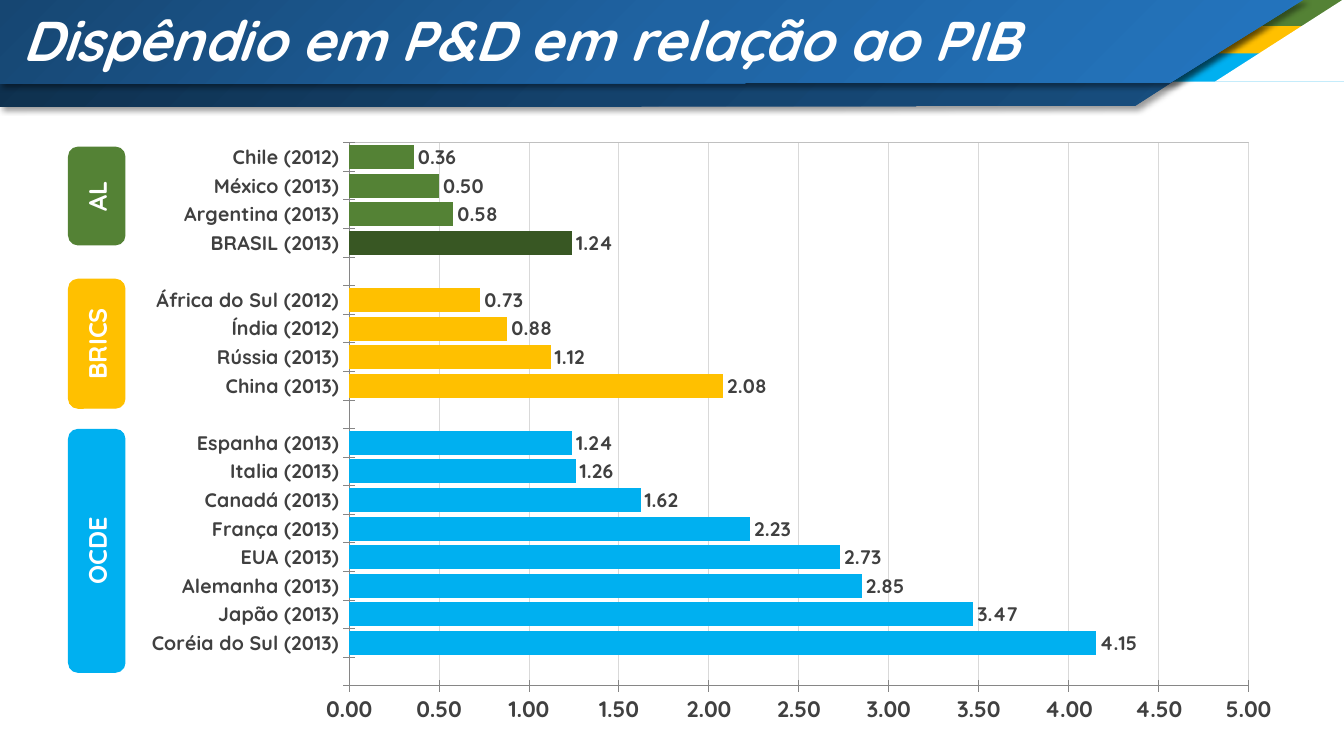
"""Build a slide comparing research spending as a share of GDP."""
import pptx
import pptx.chart.data
import pptx.dml.color
import pptx.enum.chart
import pptx.enum.shapes
import pptx.enum.text
import pptx.oxml
import pptx.oxml.ns
import pptx.util

Inches = pptx.util.Inches
GREEN, YELLOW, BLUE = "548235", "FFC000", "00B0F0"
WHITE, DARK_TEXT = "FFFFFF", "404040"
GROUPS = [
    ("OCDE", BLUE, 4.26, 2.41, [
        ("Coréia do Sul (2013)", 4.15), ("Japão (2013)", 3.47),
        ("Alemanha (2013)", 2.85), ("EUA (2013)", 2.73),
        ("França (2013)", 2.23), ("Canadá (2013)", 1.62),
        ("Italia (2013)", 1.26), ("Espanha (2013)", 1.24)]),
    ("BRICS", YELLOW, 2.77, 1.28, [
        ("China (2013)", 2.08), ("Rússia (2013)", 1.12),
        ("Índia (2012)", 0.88), ("África do Sul (2012)", 0.73)]),
    ("AL", GREEN, 1.46, 0.97, [
        ("BRASIL (2013)", 1.24), ("Argentina (2013)", 0.58),
        ("México (2013)", 0.5), ("Chile (2012)", 0.36)]),
]
HIGHLIGHTS = {"BRASIL (2013)": "385723"}


def colour(value):
    return pptx.dml.color.RGBColor.from_string(value)


def xml(tag, content, attributes=""):
    namespaces = pptx.oxml.ns.nsdecls("a", "c")
    return pptx.oxml.parse_xml(f"<{tag} {namespaces} {attributes}>{content}</{tag}>")


class SlideBuilder:
    """Hold the style and current slide."""

    def __init__(self, deck, font_name):
        self.page = deck.slides.add_slide(deck.slide_layouts[5])
        self.font_name = font_name

    def style(self, font, size, value, bold=True, italic=False):
        font.name = self.font_name
        font.size = pptx.util.Pt(size)
        font.bold = bold
        font.italic = italic
        font.color.rgb = colour(value)

    def title(self, text, left, top, width, height):
        box = self.page.shapes.title
        box.left, box.top = Inches(left), Inches(top)
        box.width, box.height = Inches(width), Inches(height)
        frame = box.text_frame
        frame.text = text
        frame.word_wrap = True
        frame.auto_size = pptx.enum.text.MSO_AUTO_SIZE.NONE
        frame.vertical_anchor = pptx.enum.text.MSO_ANCHOR.TOP
        paragraph = frame.paragraphs[0]
        paragraph.alignment = pptx.enum.text.PP_ALIGN.LEFT
        self.style(paragraph.font, 40, WHITE, italic=True)
        self.page.shapes.element.append(box.element)

    def shape(self, kind, left, top, width, height, fill):
        shape = self.page.shapes.add_shape(
            kind, Inches(left), Inches(top), Inches(width), Inches(height))
        shape.shadow.inherit = False
        shape.fill.solid()
        shape.fill.fore_color.rgb = colour(fill)
        shape.line.fill.background()
        return shape

    def band(self, points, stops):
        corners = [(Inches(x), Inches(y)) for x, y in points]
        builder = self.page.shapes.build_freeform(*corners[0])
        builder.add_line_segments(corners[1:], close=True)
        shape = builder.convert_to_shape()
        shape.line.fill.background()
        shape.fill.background()
        shape.shadow.inherit = False
        properties = shape.element.spPr
        stop_list = "".join(
            f'<a:gs pos="{position * 1000}"><a:srgbClr val="{value}"/></a:gs>'
            for position, value in zip((0, 50, 100), stops))
        gradient = xml("a:gradFill", f'<a:gsLst>{stop_list}</a:gsLst><a:path path="circle">'
                       '<a:fillToRect r="100000" b="100000"/></a:path>')
        properties.replace(properties.find(pptx.oxml.ns.qn("a:noFill")), gradient)
        properties.find(pptx.oxml.ns.qn("a:effectLst")).append(xml(
            "a:outerShdw", '<a:srgbClr val="000000"><a:alpha val="40000"/></a:srgbClr>',
            'blurRad="50800" dist="38100" dir="2700000" algn="tl" rotWithShape="0"'))

    def group_label(self, text, fill, top, height):
        rounded = pptx.enum.shapes.MSO_SHAPE.ROUNDED_RECTANGLE
        shape = self.shape(rounded, 0.68, top, 0.56, height, fill)
        shape.line.color.rgb = colour(fill)
        shape.line.width = pptx.util.Pt(0.75)
        frame = shape.text_frame
        frame.text = text
        frame.word_wrap = True
        frame.vertical_anchor = pptx.enum.text.MSO_ANCHOR.MIDDLE
        shape.element.txBody.bodyPr.set("vert", "vert270")
        paragraph = frame.paragraphs[0]
        paragraph.alignment = pptx.enum.text.PP_ALIGN.CENTER
        self.style(paragraph.font, 18, WHITE)

    def axis(self, axis, size):
        axis.major_tick_mark = pptx.enum.chart.XL_TICK_MARK.CROSS
        axis.minor_tick_mark = pptx.enum.chart.XL_TICK_MARK.NONE
        axis.format.line.color.rgb = colour("868686")
        axis.format.line.width = pptx.util.Pt(0.75)
        self.style(axis.tick_labels.font, size, DARK_TEXT)

    def bar_chart(self, rows, left, top, width, height):
        data = pptx.chart.data.CategoryChartData()
        data.categories = [name for name, value, fill in rows]
        data.add_series("Series 1", [value for name, value, fill in rows])
        chart = self.page.shapes.add_chart(
            pptx.enum.chart.XL_CHART_TYPE.BAR_CLUSTERED,
            Inches(left), Inches(top), Inches(width), Inches(height), data).chart
        chart.has_title = False
        chart.has_legend = False
        self.style(chart.font, 10, "003366", bold=False)

        self.axis(chart.category_axis, 14)
        scale = chart.value_axis
        self.axis(scale, 16)
        scale.minimum_scale, scale.maximum_scale, scale.major_unit = 0, 5, 0.5
        scale.tick_labels.number_format = "#,##0.00"
        scale.tick_labels.number_format_is_linked = False
        scale.has_major_gridlines = True
        scale.major_gridlines.format.line.color.rgb = colour("D9D9D9")
        scale.major_gridlines.format.line.width = pptx.util.Pt(0.75)

        plot = chart.plots[0]
        plot.gap_width = 19
        plot.vary_by_categories = False
        series = plot.series[0]
        series.invert_if_negative = False
        series.format.fill.solid()
        series.format.fill.fore_color.rgb = colour(YELLOW)
        for index, (name, value, fill) in enumerate(rows):
            if value is not None and fill != YELLOW:
                bar = series.points[index].format.fill
                bar.solid()
                bar.fore_color.rgb = colour(fill)
        labels = series.data_labels
        labels.show_value = True
        labels.number_format = "0.00"
        labels.number_format_is_linked = False
        labels.position = pptx.enum.chart.XL_LABEL_POSITION.OUTSIDE_END
        self.style(labels.font, 14, DARK_TEXT)
        self.plot_area(chart, x=0.231, y=0.04, w=0.73, h=0.838)

    def plot_area(self, chart, **fractions):
        area = chart.element.find(".//" + pptx.oxml.ns.qn("c:plotArea"))
        for layout in area.findall(pptx.oxml.ns.qn("c:layout")):
            area.remove(layout)
        sizes = "".join(f'<c:{side} val="{part}"/>' for side, part in fractions.items())
        area.insert(0, xml(
            "c:layout", '<c:manualLayout><c:layoutTarget val="inner"/>'
            f'<c:xMode val="edge"/><c:yMode val="edge"/>{sizes}</c:manualLayout>'))
        area.append(xml("c:spPr", '<a:noFill/><a:ln w="9525"><a:solidFill>'
                        '<a:srgbClr val="C0C0C0"/></a:solidFill></a:ln>'))


def main():
    deck = pptx.Presentation()
    deck.slide_width, deck.slide_height = Inches(13.33), Inches(7.5)
    slide = SlideBuilder(deck, "Quicksand")
    shapes = pptx.enum.shapes.MSO_SHAPE

    for index, fill in enumerate((GREEN, YELLOW, BLUE)):
        slide.shape(shapes.RECTANGLE, 0, -0.01 + 0.27 * index, 13.33, 0.28, fill)
    slide.band([(0, 0.22), (12.55, 0.22), (11.26, 1.05), (0, 1.06)],
               ("0E2F4C", "14426C", "184F80"))
    slide.band([(0, -0.01), (12.94, -0.01), (11.61, 0.82), (0, 0.83)],
               ("164672", "1F63A2", "2476C0"))
    slide.shape(shapes.RIGHT_TRIANGLE, 12.28, -0.24, 0.82, 1.28, WHITE).rotation = 270
    slide.title("Dispêndio em P&D em relação ao PIB", 0.12, 0, 11.72, 0.77)

    rows = []
    for name, fill, top, height, countries in GROUPS:
        rows.append(("", None, fill))
        rows += [(country, value, HIGHLIGHTS.get(country, fill))
                 for country, value in countries]
    slide.bar_chart(rows, 0.64, 1.16, 12.22, 6.43)
    for name, fill, top, height, countries in GROUPS:
        slide.group_label(name, fill, top, height)
    deck.save("out.pptx")


if __name__ == "__main__":
    main()
